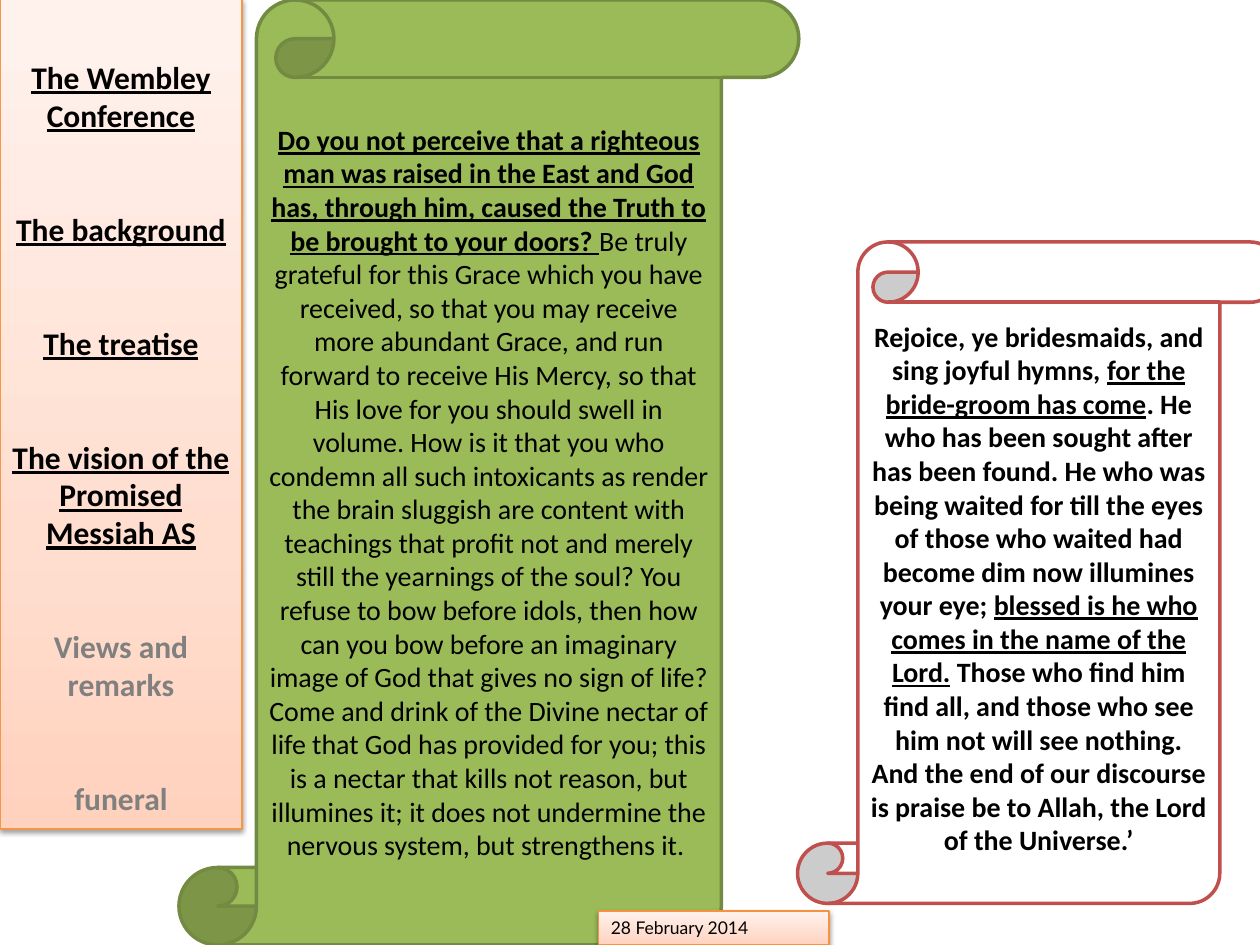
from copy import deepcopy

from lxml import etree
from pptx import Presentation
from pptx.dml.color import RGBColor
from pptx.enum import shapes, text
from pptx.oxml import ns
from pptx.util import Inches, Pt

TOPICS = [
    ("The Wembley Conference", True),
    ("The background", True),
    ("The treatise", True),
    ("The vision of the Promised Messiah AS", True),
    ("Views and remarks", False),
    ("funeral", False),
]
SERMON = [
    ("Do you not perceive that a righteous man was raised in the East and God "
     "has, through him, caused the Truth to be brought to your doors? ", True, True),
    ("Be truly grateful for this Grace which you have received, so that you may "
     "receive more abundant Grace, and run forward to receive His Mercy, so that "
     "His love for you should swell in volume. How is it that you who condemn all "
     "such intoxicants as render the brain sluggish are content with teachings "
     "that profit not and merely still the yearnings of the soul? You refuse to "
     "bow before idols, then how can you bow before an imaginary image of God that "
     "gives no sign of life? Come and drink of the Divine nectar of life that God "
     "has provided for you; this is a nectar that kills not reason, but illumines "
     "it; it does not undermine the nervous system, but strengthens it. ", False, False),
]
HYMN = [
    ("Rejoice, ye bridesmaids, and sing joyful hymns, ", True, False),
    ("for the bride-groom has come", True, True),
    (". He who has been sought after has been found. He who was being waited for "
     "till the eyes of those who waited had become dim now illumines your eye; ", True, False),
    ("blessed is he who comes in the name of the Lord.", True, True),
    (" Those who find him find all, and those who see him not will see nothing. "
     "And the end of our discourse is praise be to Allah, the Lord of the "
     "Universe.’", True, False),
]
DATE = "28 February 2014"
PEACH = [(0, "FFD2BD"), (0.35, "FFDED0"), (1, "FFF2ED")]
SCROLL = shapes.MSO_SHAPE.VERTICAL_SCROLL
RECT = shapes.MSO_SHAPE.RECTANGLE


def tint(color, code):
    color.rgb = RGBColor.from_string(code)


def add_box(slide, kind, place, edge, width):
    box = slide.shapes.add_shape(kind, *map(Inches, place))
    box.shadow.inherit = False
    tint(box.line.color, edge)
    box.line.width = Pt(width)
    box.text_frame.word_wrap = True
    box.text_frame.vertical_anchor = text.MSO_ANCHOR.MIDDLE
    return box


def add_run(para, words, size, bold=False, under=False, code="000000", face="Calibri"):
    run = para.add_run()
    run.text = words
    font = run.font
    font.size, font.bold, font.underline, font.name = Pt(size), bold, under, face
    tint(font.color, code)


def add_scroll(slide, place, fill, edge, runs):
    box = add_box(slide, SCROLL, place, edge, 2)
    box.fill.solid()
    tint(box.fill.fore_color, fill)
    para = box.text_frame.paragraphs[0]
    para.alignment = text.PP_ALIGN.CENTER
    for words, bold, under in runs:
        add_run(para, words, 16, bold, under)


def add_panel(slide, place, edge):
    box = add_box(slide, RECT, place, edge, 0.75)
    box.fill.gradient()
    box.fill.gradient_angle = 90
    props = box.element.spPr
    stops = props.find(".//" + ns.qn("a:gsLst"))
    stops.append(deepcopy(stops[0]))
    for stop, (spot, code) in zip(box.fill.gradient_stops, PEACH):
        stop.position = spot
        tint(stop.color, code)
    glow = etree.SubElement(
        props.find(ns.qn("a:effectLst")), ns.qn("a:outerShdw"),
        blurRad=str(Pt(3.1)), dist=str(Pt(1.6)), dir="5400000", rotWithShape="0")
    hue = etree.SubElement(glow, ns.qn("a:srgbClr"), val="000000")
    etree.SubElement(hue, ns.qn("a:alpha"), val="38000")
    return box.text_frame


def add_topics(slide):
    frame = add_panel(slide, (0, -0.01, 1.92, 6.59), "F79646")
    frame.vertical_anchor = text.MSO_ANCHOR.TOP
    frame.margin_top = Inches(0.47)
    for pos, (words, done) in enumerate(TOPICS):
        para = frame.add_paragraph() if pos else frame.paragraphs[0]
        para.alignment = text.PP_ALIGN.CENTER
        para.space_after = Pt(43.5)
        add_run(para, words, 18, True, done, "000000" if done else "808080")


def add_date(slide):
    frame = add_panel(slide, (4.75, 7.23, 1.83, 0.27), "F69240")
    para = frame.paragraphs[0]
    para.alignment = text.PP_ALIGN.LEFT
    add_run(para, DATE, 10, face="Lato")


def main():
    deck = Presentation()
    deck.slide_width, deck.slide_height = Inches(10), Inches(7.5)
    slide = deck.slides.add_slide(deck.slide_layouts[6])
    add_scroll(slide, (1.42, 0, 4.92, 7.5), "9BBB59", "738A42", SERMON)
    add_topics(slide)
    add_scroll(slide, (6.33, 1.92, 3.83, 5.25), "FFFFFF", "C0504D", HYMN)
    add_date(slide)
    deck.save("out.pptx")


if __name__ == "__main__":
    main()
